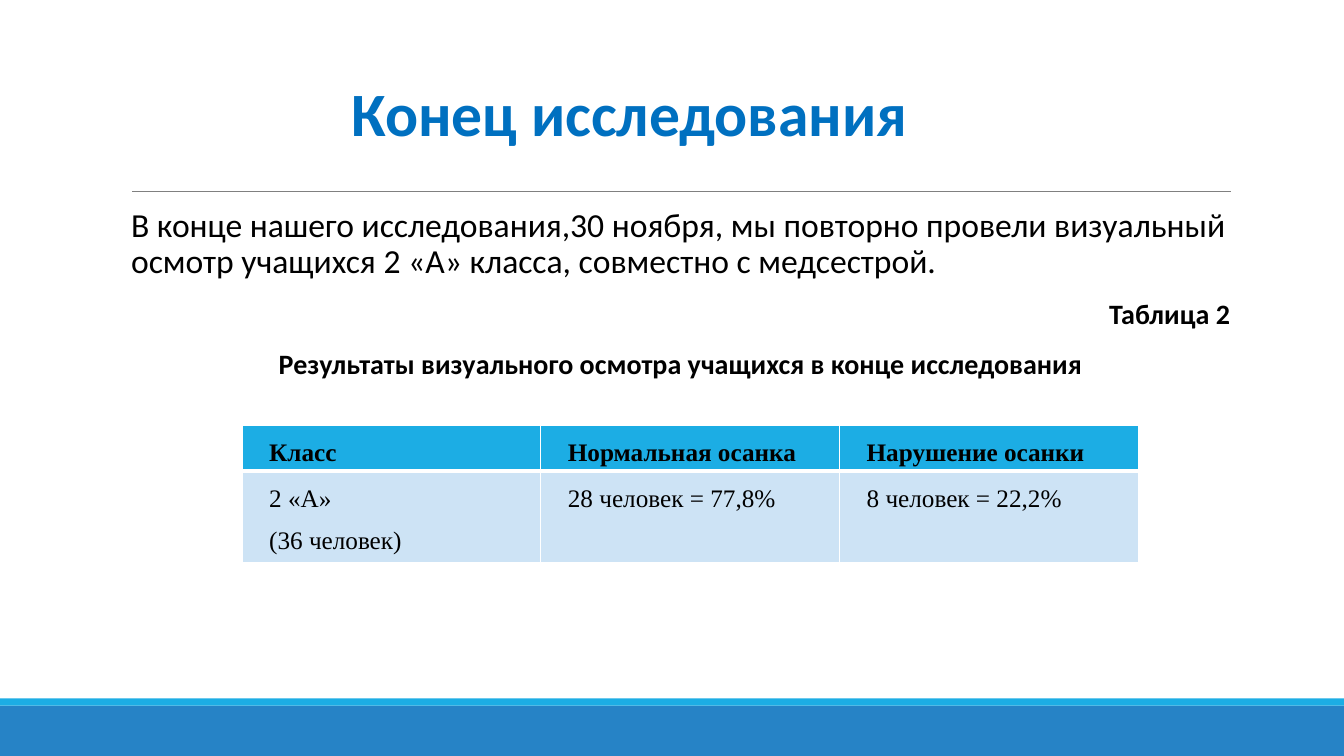
"""Build the slide with the results of the final posture check."""
from lxml.etree import SubElement
from pptx import Presentation
from pptx.dml.color import RGBColor
from pptx.enum.shapes import MSO_CONNECTOR as Connector, MSO_SHAPE as Shape
from pptx.enum.text import PP_ALIGN as Align
from pptx.oxml import parse_xml
from pptx.oxml.ns import nsdecls, qn
from pptx.util import Inches, Pt

COLORS = {
    "title": "0070C0", "text": "000000", "band": "2683C6", "accent": "1CADE4",
    "rule": "808080", "row": "CDE3F5", "border": "FFFFFF",
}
RESULTS = [
    [["Класс"], ["Нормальная осанка"], ["Нарушение осанки"]],
    [["2 «А»", "(36 человек)"], ["28 человек = 77,8%"], ["8 человек = 22,2%"]],
]


def color(name):
    """Return the named colour."""
    return RGBColor.from_string(COLORS[name])


def write(para, text, size=18, font="Calibri", fill="text", bold=False,
          align=Align.LEFT, spacing=1.0, before=0, after=0, indent=0):
    """Put formatted text into a paragraph."""
    para.alignment = align
    para.line_spacing = spacing
    para.space_before, para.space_after = Pt(before), Pt(after)
    para._p.get_or_add_pPr().set("marL", str(Inches(indent)))
    span = para.add_run()
    span.text = text
    span.font.size, span.font.name, span.font.bold = Pt(size), font, bold
    span.font.color.rgb = color(fill)


def add_band(page, top, height, fill):
    """Draw a full-width band."""
    band = page.shapes.add_shape(
        Shape.RECTANGLE, 0, Inches(top), Inches(13.33), Inches(height))
    band.shadow.inherit = False
    band.fill.solid()
    band.fill.fore_color.rgb = color(fill)
    band.line.fill.background()


def add_rule(page, left, right, top):
    """Draw the thin line under the title."""
    rule = page.shapes.add_connector(
        Connector.STRAIGHT, Inches(left), Inches(top), Inches(right), Inches(top))
    rule.line.color.rgb = color("rule")
    rule.line.width = Pt(0.5)
    SubElement(rule._element.spPr, qn("a:effectLst"))


def add_text(page, left, top, width, height, side=0.1):
    """Add a wrapping text box and return its frame."""
    box = page.shapes.add_textbox(
        Inches(left), Inches(top), Inches(width), Inches(height))
    frame = box.text_frame
    frame.word_wrap = True
    frame.margin_left = frame.margin_right = Inches(side)
    return frame


def set_borders(cell, bottom):
    """Give a cell white borders with the chosen bottom width."""
    properties = cell._tc.get_or_add_tcPr()
    widths = {"lnL": 1, "lnR": 1, "lnT": 1, "lnB": bottom}
    for index, (side, width) in enumerate(widths.items()):
        properties.insert(index, parse_xml(
            f'<a:{side} {nsdecls("a")} w="{Pt(width)}"><a:solidFill>'
            f'<a:srgbClr val="{COLORS["border"]}"/></a:solidFill></a:{side}>'))


def add_results(page, left, top, width, heights):
    """Add the table of results."""
    table = page.shapes.add_table(
        len(RESULTS), len(RESULTS[0]), Inches(left), Inches(top),
        Inches(width), Inches(sum(heights))).table
    for row, (lines, height) in enumerate(zip(RESULTS, heights)):
        header = row == 0
        table.rows[row].height = Inches(height)
        for column, texts in enumerate(lines):
            cell = table.cell(row, column)
            cell.margin_left = cell.margin_right = Inches(0.07)
            cell.margin_top = cell.margin_bottom = 0
            cell.fill.solid()
            cell.fill.fore_color.rgb = color("accent" if header else "row")
            set_borders(cell, bottom=3 if header else 1)
            frame = cell.text_frame
            for index, text in enumerate(texts):
                para = frame.add_paragraph() if index else frame.paragraphs[0]
                write(para, text, font="Times New Roman", bold=header,
                      align=Align.JUSTIFY, spacing=1.5, indent=0.2)


def main():
    """Build and save the deck."""
    deck = Presentation()
    deck.slide_width, deck.slide_height = Inches(13.33), Inches(7.5)
    page = deck.slides.add_slide(deck.slide_layouts[6])
    add_band(page, 7, 0.5, "band")
    add_band(page, 6.93, 0.07, "accent")
    add_rule(page, 1.31, 12.21, 1.9)

    body = add_text(page, 1.2, 2.02, 11, 4.4, side=0)
    style = {"spacing": 0.9, "before": 12, "after": 2, "indent": 0.1}
    write(body.paragraphs[0],
          "В конце нашего исследования,30 ноября, мы повторно провели визуальный "
          "осмотр учащихся 2 «А» класса, совместно с медсестрой.", size=24, **style)
    write(body.add_paragraph(), "Таблица 2",
          size=20, bold=True, align=Align.RIGHT, **style)
    write(body.add_paragraph(),
          "Результаты визуального осмотра учащихся в конце исследования",
          size=20, bold=True, align=Align.CENTER, **style)

    title = add_text(page, 1.75, 0.69, 8.99, 0.84)
    write(title.paragraphs[0], "Конец исследования",
          size=44, fill="title", bold=True, align=Align.CENTER)
    add_results(page, 2.4, 4.22, 8.89, [0.44, 0.91])
    deck.save("out.pptx")


if __name__ == "__main__":
    main()
